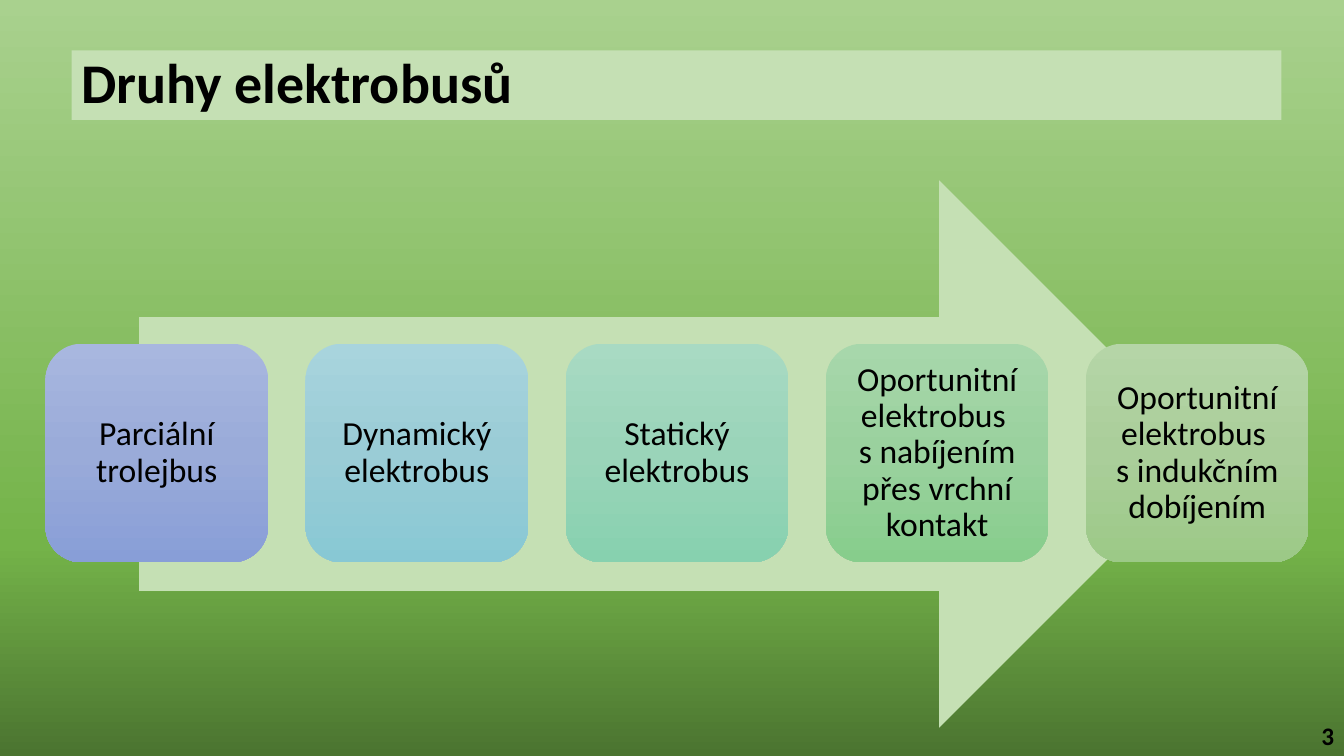
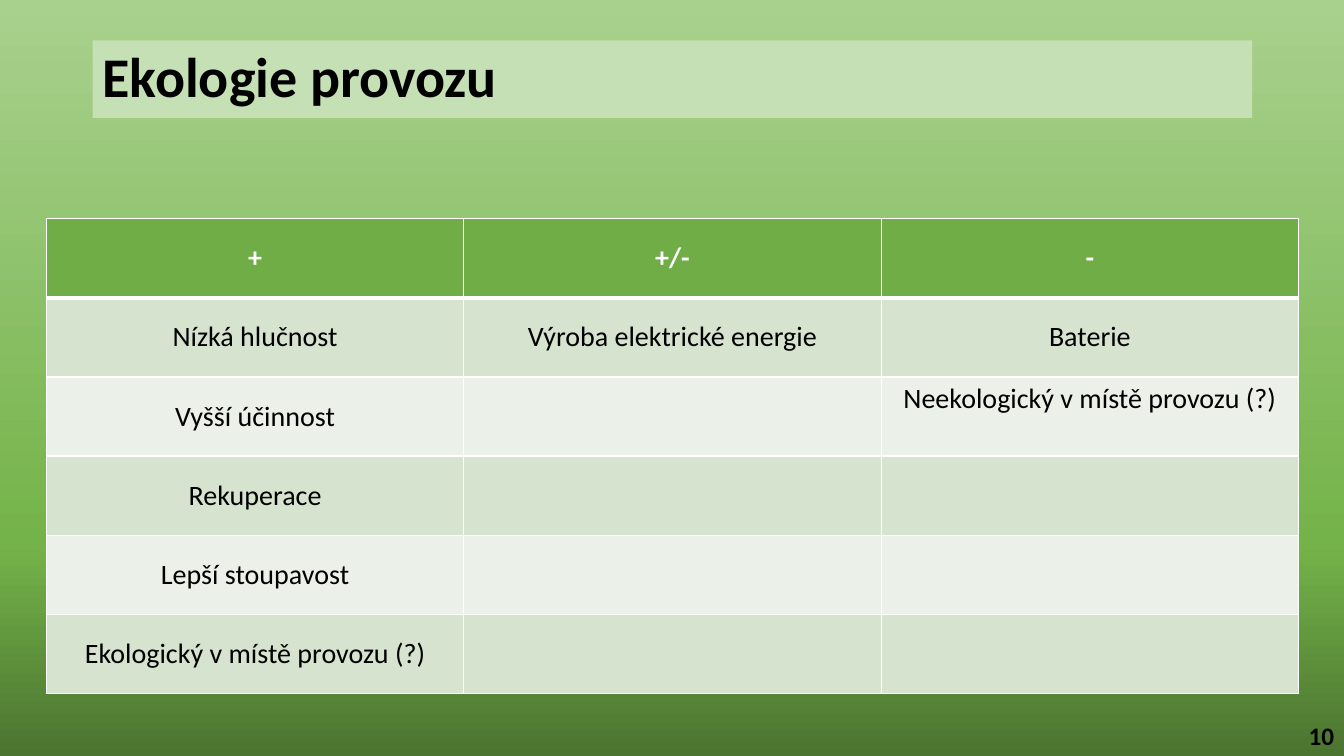
"""Build two slides on electric buses: their types and their ecology."""
from lxml import etree
from pptx import Presentation
from pptx.dml.color import RGBColor
from pptx.enum.shapes import MSO_SHAPE
from pptx.enum.text import MSO_ANCHOR, PP_ALIGN
from pptx.oxml.ns import qn
from pptx.util import Inches, Pt

RECT, ROUND, ARROW = MSO_SHAPE.RECTANGLE, MSO_SHAPE.ROUNDED_RECTANGLE, MSO_SHAPE.RIGHT_ARROW
LEFT, MID, RIGHT = PP_ALIGN.LEFT, PP_ALIGN.CENTER, PP_ALIGN.RIGHT
TOP, MIDDLE = MSO_ANCHOR.TOP, MSO_ANCHOR.MIDDLE

FONT = "Calibri"
BLACK, WHITE, PALE, GREEN = "000000", "FFFFFF", "C5E0B4", "70AD47"
BANDS = ["D5E3CF", "EBF1E9"]
BACK = [(0, "4B7430"), (28, "74B349"), (100, "A9D18E")]

TYPES = [
    ("Parciální trolejbus", ["A8B7DF", "9AABD9", "889ED7"]),
    ("Dynamický elektrobus", ["A8D4DD", "9ACCD6", "88C8D4"]),
    ("Statický elektrobus", ["A8DAC3", "9AD4B9", "87D1AF"]),
    ("Oportunitní elektrobus \ns nabíjením přes vrchní kontakt", ["A7D7AB", "9AD19E", "87CD8C"]),
    ("Oportunitní elektrobus \ns indukčním dobíjením", ["B5D5A7", "AACE9A", "9CC987"]),
]
HEADS = ["+", "+/-", "-"]
ROWS = [
    ["Nízká hlučnost", "Výroba elektrické energie", "Baterie"],
    ["Vyšší účinnost", "", "Neekologický v místě provozu (?)"],
    ["Rekuperace", "", ""],
    ["Lepší stoupavost", "", ""],
    ["Ekologický v místě provozu (?)", "", ""],
]
RAISED = (2, 2)


def rgb(code):
    return RGBColor.from_string(code)


def blend(fill, root, stops, angle):
    fill.gradient()
    fill.gradient_angle = angle
    items = root.find(".//" + qn("a:gsLst"))
    for old in list(items):
        items.remove(old)
    for spot, code in stops:
        stop = etree.SubElement(items, qn("a:gs"), pos=str(spot * 1000))
        etree.SubElement(stop, qn("a:srgbClr"), val=code)


def write(frame, text, size, align, color=BLACK, bold=False, space=None):
    para = frame.paragraphs[0]
    para.alignment = align
    para.line_spacing = space
    for num, part in enumerate(text.split("\n")):
        if num:
            para.add_line_break()
        run = para.add_run()
        run.text = part
        font = run.font
        font.name, font.size, font.bold = FONT, Pt(size), bold
        font.color.rgb = rgb(color)


def block(slide, kind, box, color=None):
    shape = slide.shapes.add_shape(kind, *map(Inches, box))
    shape.shadow.inherit = False
    shape.line.fill.background()
    if color:
        shape.fill.solid()
        shape.fill.fore_color.rgb = rgb(color)
    frame = shape.text_frame
    frame.word_wrap = True
    frame.vertical_anchor = MIDDLE
    return shape


def start(deck, title, box, page):
    slide = deck.slides.add_slide(deck.slide_layouts[6])
    band = block(slide, RECT, box, PALE)
    write(band.text_frame, title, 40, LEFT, bold=True, space=0.9)
    frame = slide.shapes.add_textbox(*map(Inches, (10.33, 7.1, 3, 0.4))).text_frame
    frame.word_wrap = True
    frame.vertical_anchor = MIDDLE
    write(frame, page, 18, RIGHT, bold=True)
    return slide


def edge(cell, sides):
    props = cell._tc.get_or_add_tcPr()
    for num, (side, width) in enumerate(sides.items()):
        line = etree.Element(qn("a:ln" + side), w=str(Pt(width)))
        fill = etree.SubElement(line, qn("a:solidFill"))
        etree.SubElement(fill, qn("a:srgbClr"), val=WHITE)
        props.insert(num, line)


def draw_types(deck):
    slide = start(deck, "Druhy elektrobusů", (0.71, 0.5, 12, 0.69), "3")
    block(slide, ARROW, (1.38, 1.79, 10.65, 5.43), PALE)
    wide, gap = 2.21, 0.37
    for num, (text, tones) in enumerate(TYPES):
        card = block(slide, ROUND, (0.45 + num * (wide + gap), 3.41, wide, 2.17))
        blend(card.fill, card.element, zip((0, 50, 100), tones), 270)
        frame = card.text_frame
        frame.margin_left = frame.margin_right = Inches(0.1)
        frame.margin_top = frame.margin_bottom = Inches(0.1)
        write(frame, text, 24, MID, space=0.9)


def draw_table(deck):
    slide = start(deck, "Ekologie provozu", (0.92, 0.4, 11.5, 0.77), "10")
    grid = [HEADS] + ROWS
    box = map(Inches, (0.46, 2.17, 12.42, 4.71))
    table = slide.shapes.add_table(len(grid), len(HEADS), *box).table
    for row, texts in enumerate(grid):
        head = row == 0
        for col, text in enumerate(texts):
            cell = table.cell(row, col)
            cell.fill.solid()
            cell.fill.fore_color.rgb = rgb(GREEN if head else BANDS[(row - 1) % 2])
            cell.vertical_anchor = TOP if (row, col) == RAISED else MIDDLE
            edge(cell, {"L": 1, "R": 1, "T": 3 if row == 1 else 1, "B": 3 if head else 1})
            if text:
                write(cell.text_frame, text, 20, MID, WHITE if head else BLACK, head)


def main():
    deck = Presentation()
    deck.slide_width, deck.slide_height = Inches(13.33), Inches(7.5)
    master = deck.slide_master
    blend(master.background.fill, master.element, BACK, 90)
    draw_types(deck)
    draw_table(deck)
    deck.save("out.pptx")


if __name__ == "__main__":
    main()
